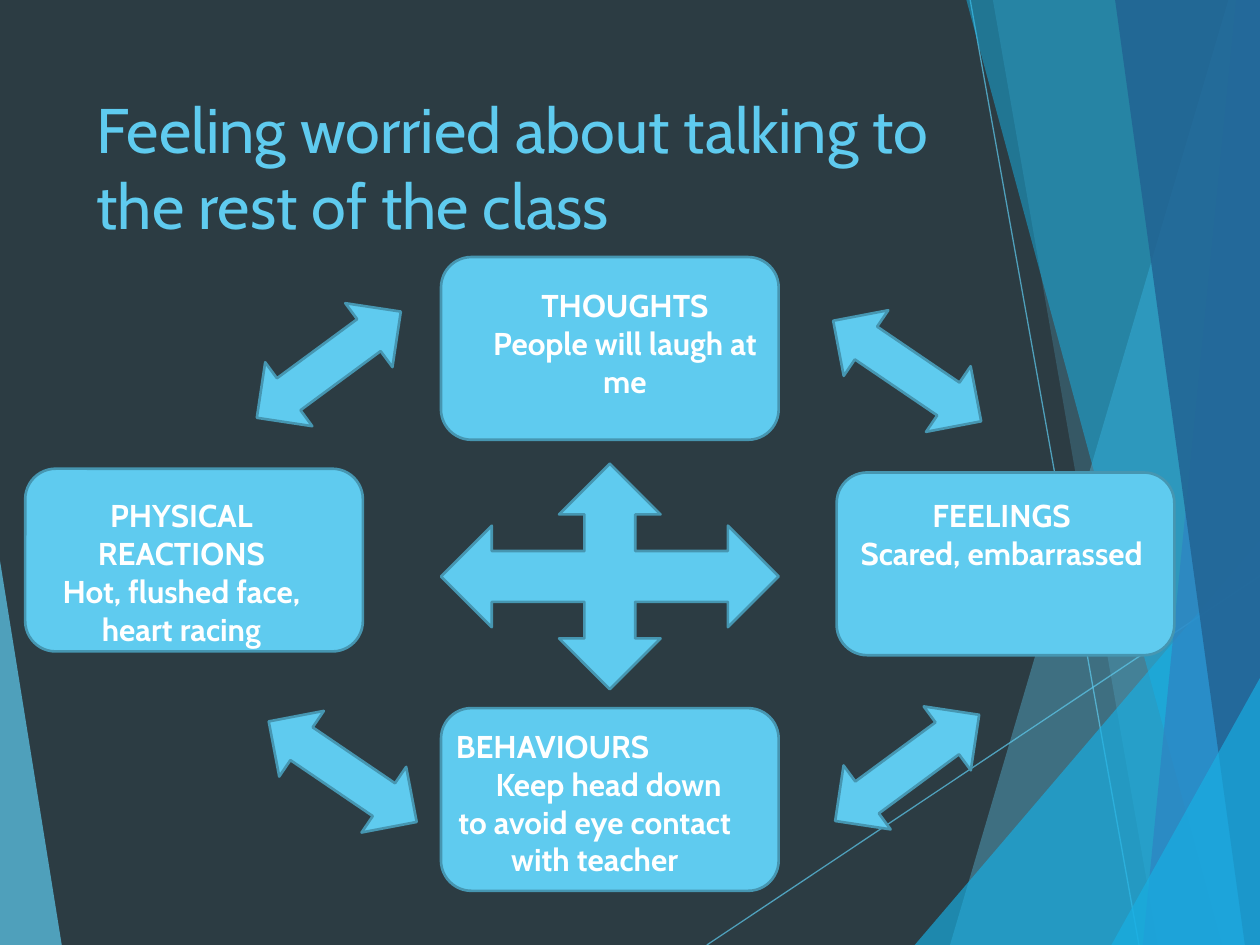
import pptx
import pptx.dml.color
import pptx.enum.shapes
import pptx.enum.text
import pptx.oxml
import pptx.oxml.ns
import pptx.util

Inches = pptx.util.Inches
Pt = pptx.util.Pt
RGBColor = pptx.dml.color.RGBColor
Shape = pptx.enum.shapes.MSO_SHAPE
Align = pptx.enum.text.PP_ALIGN

DARK = RGBColor(0x2C, 0x3C, 0x43)
SKY = RGBColor(0x5F, 0xCB, 0xEF)
EDGE = RGBColor(0x46, 0x96, 0xB1)
CYAN = RGBColor(0x17, 0xB0, 0xE4)
BLUE = RGBColor(0x2E, 0x83, 0xC3)
NAVY = RGBColor(0x22, 0x62, 0x92)
WHITE = RGBColor(0xFF, 0xFF, 0xFF)

FONT = "Cabin"
CARD_SIZE = (2.68, 1.45)
ARROW_SIZE = (1.42, 0.63)

FACETS = [
    ([(0, 4.45), (0.49, 7.5), (0, 7.5)], SKY, 70),
    ([(9.75, 0), (7.54, 7.5), (10, 7.5), (10, 0)], SKY, 36),
    ([(7.88, 0), (9.19, 7.5), (10, 7.5), (10, 0)], SKY, 20),
    ([(7.26, 7.5), (10, 4.29), (10, 7.5)], CYAN, 66),
    ([(7.67, 0), (9.7, 7.5), (10, 7.5), (10, 0)], CYAN, 50),
    ([(9.81, 0), (9.07, 7.5), (10, 7.5), (10, 0)], BLUE, 70),
    ([(8.85, 0), (9.88, 7.5), (10, 7.5), (10, 0)], NAVY, 82),
    ([(8.82, 7.5), (10, 5.38), (10, 7.5)], CYAN, 66),
]
RAYS = [((5.61, 7.5), (10, 4.57)), ((7.7, 0), (9.04, 7.5))]
CARDS = [(3.5, 2.04), (3.5, 5.62), (6.64, 3.75), (0.2, 3.72)]
DIAGONALS = [
    (6.49, 2.63, 34.2),
    (2.01, 5.81, 34.2),
    (1.9, 2.58, -36.4),
    (6.49, 5.78, -36.4),
]
CAPTIONS = [
    (3.74, 2.22, 1.01, ["THOUGHTS", "People will laugh at me"]),
    (6.73, 3.89, 0.71, ["FEELINGS", "Scared, embarrassed"]),
    (3.5, 5.72, 1.31, ["BEHAVIOURS", "Keep head down to avoid eye contact with teacher"]),
    (0.22, 3.89, 1.01, ["PHYSICAL REACTIONS", "Hot, flushed face, heart racing"]),
]


def set_opacity(element, percent):
    color = element.find(".//" + pptx.oxml.ns.qn("a:srgbClr"))
    alpha = pptx.oxml.parse_xml(
        f'<a:alpha {pptx.oxml.ns.nsdecls("a")} val="{percent * 1000}"/>'
    )
    color.append(alpha)


def add_facet(slide, points, color, opacity):
    corners = [(Inches(x), Inches(y)) for x, y in points]
    builder = slide.shapes.build_freeform(*corners[0])
    builder.add_line_segments(corners[1:], close=True)
    facet = builder.convert_to_shape()
    facet.shadow.inherit = False
    facet.line.fill.background()
    facet.fill.solid()
    facet.fill.fore_color.rgb = color
    set_opacity(facet.fill._xPr, opacity)


def add_ray(slide, start, end):
    ray = slide.shapes.add_connector(
        pptx.enum.shapes.MSO_CONNECTOR.STRAIGHT,
        *(Inches(value) for value in start + end),
    )
    ray.line.color.rgb = SKY
    ray.line.width = Pt(0.75)
    properties = ray._element.spPr
    set_opacity(properties, 70)
    properties.append(
        pptx.oxml.parse_xml(f'<a:effectLst {pptx.oxml.ns.nsdecls("a")}/>')
    )


def add_block(slide, kind, left, top, size, rotation=0):
    block = slide.shapes.add_shape(
        kind, *(Inches(value) for value in (left, top, *size))
    )
    block.rotation = rotation
    block.shadow.inherit = False
    block.fill.solid()
    block.fill.fore_color.rgb = SKY
    block.line.color.rgb = EDGE
    block.line.width = Pt(1.5)


def add_text(slide, place, lines, size, color, bold=False, align=Align.LEFT):
    box = slide.shapes.add_textbox(*(Inches(value) for value in place))
    frame = box.text_frame
    frame.word_wrap = True
    frame.text = "\n".join(lines)
    for para in frame.paragraphs:
        para.alignment = align
        for span in para.runs:
            span.font.name = FONT
            span.font.size = Pt(size)
            span.font.bold = bold
            span.font.color.rgb = color
    return frame


def offset_behaviours(frame):
    heading, detail = frame.paragraphs
    heading.alignment = Align.LEFT
    heading._p.get_or_add_pPr().set("indent", str(Inches(0.02)))
    detail._p.get_or_add_pPr().set("indent", str(Inches(0.22)))


def main():
    deck = pptx.Presentation()
    deck.slide_width = Inches(10)
    deck.slide_height = Inches(7.5)
    slide = deck.slides.add_slide(deck.slide_layouts[6])
    slide.background.fill.solid()
    slide.background.fill.fore_color.rgb = DARK

    add_facet(slide, *FACETS[0])
    for start, end in RAYS:
        add_ray(slide, start, end)
    for facet in FACETS[1:]:
        add_facet(slide, *facet)

    title = "Feeling worried about talking to the rest of the class"
    add_text(slide, (0.67, 0.67, 6.94, 1.44), [title], 36, SKY)

    for left, top in CARDS:
        add_block(slide, Shape.ROUNDED_RECTANGLE, left, top, CARD_SIZE)
    add_block(slide, Shape.QUAD_ARROW, 3.5, 3.68, (2.68, 1.79))
    for left, top, rotation in DIAGONALS:
        add_block(slide, Shape.LEFT_RIGHT_ARROW, left, top, ARROW_SIZE, rotation)

    for left, top, height, lines in CAPTIONS:
        place = (left, top, 2.44, height)
        frame = add_text(slide, place, lines, 18, WHITE, True, Align.CENTER)
        if lines[0] == "BEHAVIOURS":
            offset_behaviours(frame)

    deck.save("out.pptx")


if __name__ == "__main__":
    main()
